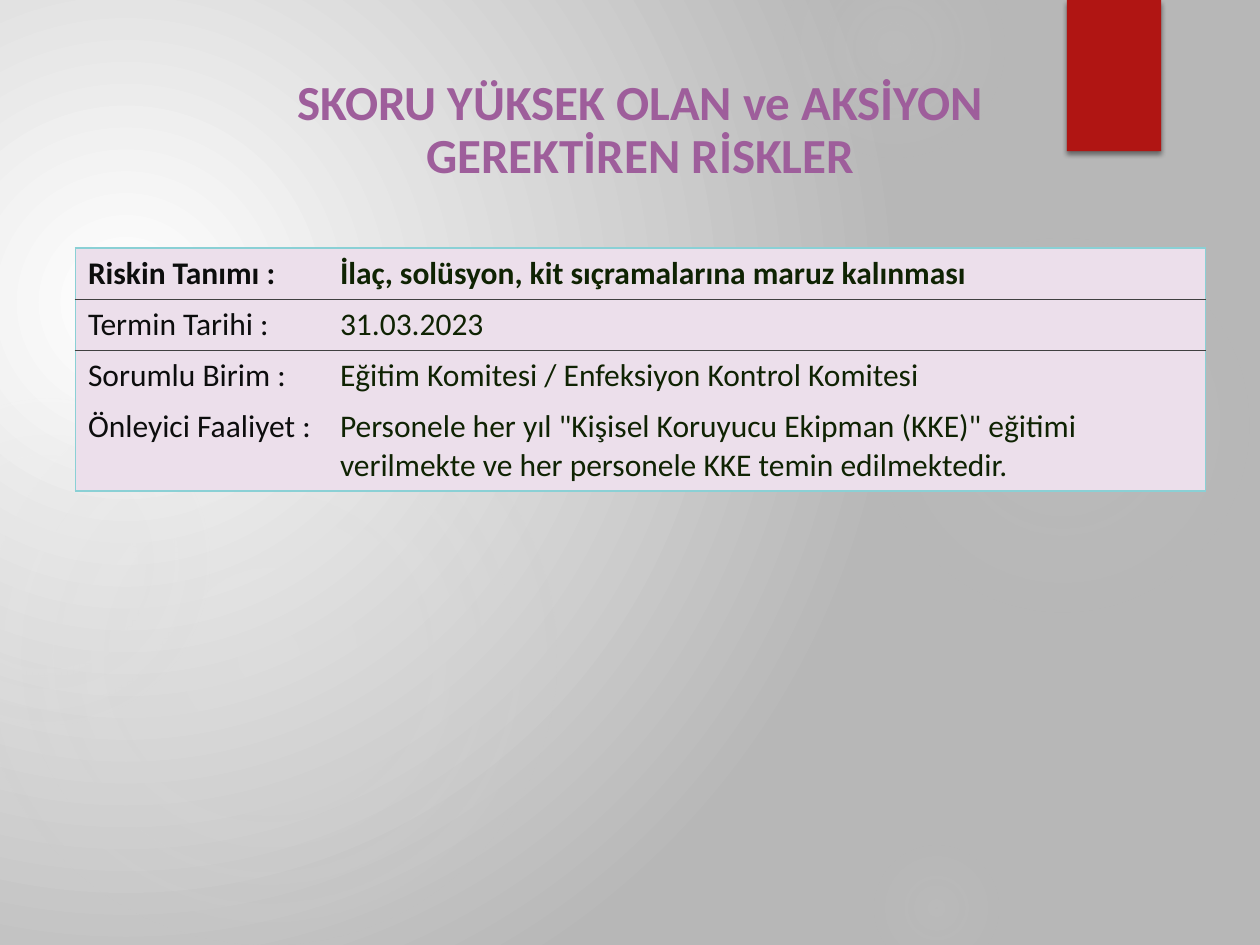
from typing import NamedTuple

from pptx import Presentation
from pptx.dml.color import RGBColor
from pptx.enum import shapes, text
from pptx.oxml import parse_xml
from pptx.oxml.ns import nsdecls, qn
from pptx.util import Cm, Pt

FONT = "Calibri"
COLORS = {
    "white": "FFFFFF",
    "gray": "B7B7B7",
    "glow": "D9D9D9",
    "red": "B01513",
    "shadow": "000000",
    "title": "9E5E9B",
    "cell": "ECDFEB",
    "frame": "8AD0D5",
    "rule": "404040",
    "label": "0C0D0D",
    "value": "0F2303",
}
NO_STYLE = "{2D5ABB26-0587-4C30-8999-92F81FD0307C}"


class Stop(NamedTuple):
    position: int
    color: str
    alpha: int = 100


class Glow(NamedTuple):
    left: float
    top: float
    size: float
    stops: tuple[tuple[int, int], ...]


class Row(NamedTuple):
    label: str
    value: str
    height: float = 1.03


GLOWS = [
    Glow(17.5, 4.66, 7.83, ((0, 7), (36, 6), (69, 0))),
    Glow(15.8, -1.27, 4.45, ((0, 14), (36, 7), (73, 0))),
    Glow(17.5, 16.93, 2.75, ((0, 9), (36, 5), (66, 0))),
    Glow(-0.42, 7.41, 11.64, ((0, 11), (36, 10), (75, 0))),
    Glow(-2.33, 8.04, 6.56, ((0, 8), (36, 8), (72, 0))),
]
ROWS = [
    Row("Riskin Tanımı :", "İlaç, solüsyon, kit sıçramalarına maruz kalınması"),
    Row("Termin Tarihi :", "31.03.2023"),
    Row("Sorumlu Birim :", "Eğitim Komitesi / Enfeksiyon Kontrol Komitesi"),
    Row("Önleyici Faaliyet :",
        'Personele her yıl "Kişisel Koruyucu Ekipman (KKE)" eğitimi '
        "verilmekte ve her personele KKE temin edilmektedir.", 1.81),
]


def rgb(name: str) -> RGBColor:
    return RGBColor.from_string(COLORS[name])


def set_radial_gradient(fill, owner, stops: list[Stop], focus: tuple[int, ...]) -> None:
    """Give owner a circular gradient; focus is left, top, right, bottom in percent."""
    fill.gradient()
    old = owner.find(".//" + qn("a:gradFill"))
    stop_xml = "".join(
        f'<a:gs pos="{s.position * 1000}"><a:srgbClr val="{COLORS[s.color]}">'
        f'<a:alpha val="{s.alpha * 1000}"/></a:srgbClr></a:gs>' for s in stops)
    sides = " ".join(f'{side}="{pct * 1000}"' for side, pct in zip("ltrb", focus))
    new = parse_xml(
        f'<a:gradFill {nsdecls("a")} rotWithShape="1"><a:gsLst>{stop_xml}</a:gsLst>'
        f'<a:path path="circle"><a:fillToRect {sides}/></a:path></a:gradFill>')
    old.getparent().replace(old, new)


def add_glow(slide, glow: Glow) -> None:
    sp = slide.shapes.add_shape(shapes.MSO_SHAPE.OVAL, Cm(glow.left), Cm(glow.top),
                                Cm(glow.size), Cm(glow.size))
    sp.shadow.inherit = False
    sp.line.fill.background()
    stops = [Stop(position, "glow", alpha) for position, alpha in glow.stops]
    set_radial_gradient(sp.fill, sp.element.spPr, stops, (50, 50, 50, 50))


def add_ribbon(slide) -> None:
    sp = slide.shapes.add_shape(shapes.MSO_SHAPE.RECTANGLE, Cm(21.51), 0, Cm(1.9), Cm(3.05))
    sp.fill.solid()
    sp.fill.fore_color.rgb = rgb("red")
    sp.line.fill.background()
    sp.shadow.inherit = False
    effects = sp.element.spPr.find(qn("a:effectLst"))
    effects.append(parse_xml(
        f'<a:outerShdw {nsdecls("a")} blurRad="{Pt(3)}" dist="{Pt(2)}" dir="5400000" '
        f'algn="ctr" rotWithShape="0"><a:srgbClr val="{COLORS["shadow"]}">'
        f'<a:alpha val="45000"/></a:srgbClr></a:outerShdw>'))


def format_run(r, size: float, color: str, bold: bool) -> None:
    r.font.name = FONT
    r.font.size = Pt(size)
    r.font.bold = bold
    r.font.color.rgb = rgb(color)


def set_title(slide, title: str) -> None:
    sp = slide.shapes.title
    sp.left, sp.top, sp.width, sp.height = Cm(5.59), Cm(1.47), Cm(14.63), Cm(2.36)
    tf = sp.text_frame
    tf.text = title
    tf.word_wrap = True
    tf.auto_size = text.MSO_AUTO_SIZE.NONE
    tf.vertical_anchor = text.MSO_ANCHOR.BOTTOM
    p = tf.paragraphs[0]
    p.alignment = text.PP_ALIGN.CENTER
    p.line_spacing = 0.9
    p.space_after = Pt(6)
    format_run(p.runs[0], 28, "title", True)
    slide.shapes.element.append(sp.element)  # bring in front of the decoration


def set_borders(cell, borders: dict[str, tuple[str, float]]) -> None:
    """Draw the given sides (L, R, T, B), each with a colour and a width in points."""
    props = cell._tc.get_or_add_tcPr()
    lines = [
        parse_xml(f'<a:ln{side} {nsdecls("a")} w="{Pt(borders[side][1])}"><a:solidFill>'
                  f'<a:srgbClr val="{COLORS[borders[side][0]]}"/></a:solidFill></a:ln{side}>')
        for side in "LRTB" if side in borders]
    for index, line in enumerate(lines):
        props.insert(index, line)


def add_risk_table(slide, rows: list[Row]) -> None:
    height = sum(row.height for row in rows)
    frame = slide.shapes.add_table(len(rows), 2, Cm(1.52), Cm(5), Cm(22.78), Cm(height))
    table = frame.table
    table.horz_banding = False
    frame.element.find(".//" + qn("a:tableStyleId")).text = NO_STYLE
    for column, width in zip(table.columns, (5.08, 17.7)):
        column.width = Cm(width)
    last = len(rows) - 1
    edge = ("frame", 1)
    rule = ("rule", 0.75)
    for i, row in enumerate(rows):
        table.rows[i].height = Cm(row.height)
        for j, (words, color) in enumerate([(row.label, "label"), (row.value, "value")]):
            cell = table.cell(i, j)
            cell.fill.solid()
            cell.fill.fore_color.rgb = rgb("cell")
            cell.text_frame.text = words
            format_run(cell.text_frame.paragraphs[0].runs[0], 18, color, i == 0)
            borders = {"R" if j else "L": edge}
            if i == 0:
                borders |= {"T": edge, "B": rule}
            elif i == 1:
                borders["T"] = rule
            if i == last:
                borders["B"] = edge
            set_borders(cell, borders)


def main() -> None:
    prs = Presentation()
    prs.slide_width, prs.slide_height = Cm(25.4), Cm(19.05)
    slide = prs.slides.add_slide(prs.slide_layouts[5])
    set_radial_gradient(slide.background.fill, slide.element,
                        [Stop(0, "white"), Stop(100, "gray")], (45, 65, 125, 100))
    for glow in GLOWS:
        add_glow(slide, glow)
    add_ribbon(slide)
    set_title(slide, "SKORU YÜKSEK OLAN ve AKSİYON GEREKTİREN RİSKLER")
    add_risk_table(slide, ROWS)
    prs.save("out.pptx")


if __name__ == "__main__":
    main()
